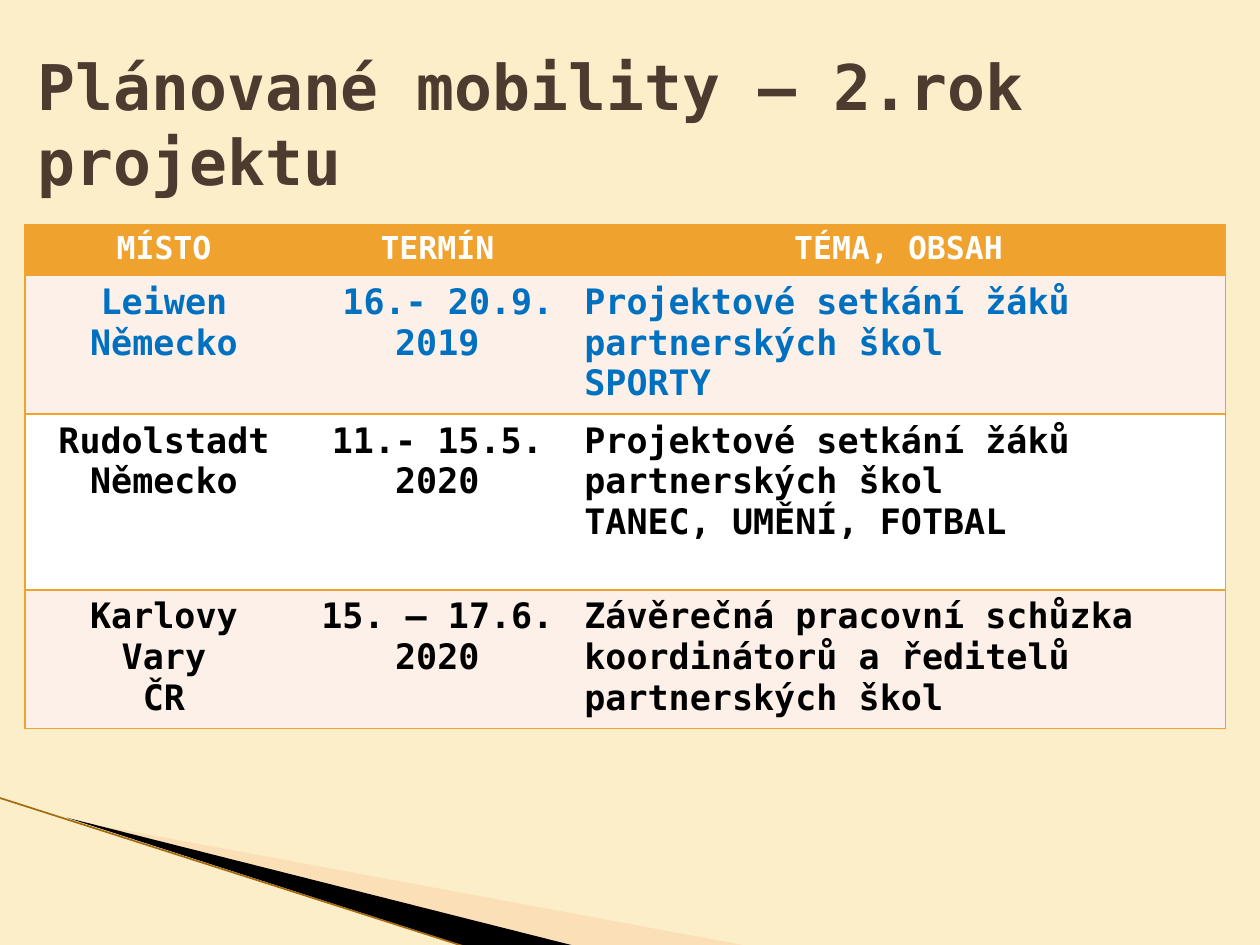
from dataclasses import dataclass

from lxml import etree
from pptx import Presentation
from pptx.dml.color import RGBColor
from pptx.enum.shapes import MSO_CONNECTOR
from pptx.enum.text import MSO_ANCHOR, PP_ALIGN
from pptx.oxml.ns import qn
from pptx.util import Pt

STRAIGHT = MSO_CONNECTOR.STRAIGHT
MIDDLE = MSO_ANCHOR.MIDDLE
LEFT, CENTER = PP_ALIGN.LEFT, PP_ALIGN.CENTER


@dataclass(frozen=True)
class Theme:
    font: str = "DejaVu Sans Mono"
    background: str = "FBEEC9"
    title: str = "4E3B30"
    accent: str = "F0A22E"
    band: str = "FCF0E8"
    white: str = "FFFFFF"
    black: str = "000000"
    highlight: str = "0070C0"
    peach: str = "FBC99E"
    edge: str = "A5690F"
    title_size: int = 36
    header_size: int = 18
    body_size: int = 20


THEME = Theme()

HEADER = ("MÍSTO", "TERMÍN", "TÉMA, OBSAH")
# Each cell is a list of paragraphs
MOBILITIES = (
    (("Leiwen", "Německo"), (" 16.- 20.9.", "2019"),
     ("Projektové setkání žáků partnerských škol", "SPORTY")),
    (("Rudolstadt", "Německo"), ("11.- 15.5.", "2020"),
     ("Projektové setkání žáků partnerských škol", "TANEC, UMĚNÍ, FOTBAL")),
    (("Karlovy Vary", "ČR"), ("15. – 17.6.", "2020"),
     ("Závěrečná pracovní schůzka koordinátorů a ředitelů partnerských škol",)),
)
COLUMN_WIDTHS = (159, 153.5, 373.5)
ROW_HEIGHTS = (29.2, 77, 100.4, 77)


def rgb(color):
    return RGBColor.from_string(color)


def write(frame, paragraphs, size, color, align=LEFT):
    for index, text in enumerate(paragraphs):
        paragraph = frame.add_paragraph() if index else frame.paragraphs[0]
        paragraph.text = text
        paragraph.alignment = align
        font = paragraph.font
        font.name, font.size, font.bold = THEME.font, Pt(size), True
        font.color.rgb = rgb(color)


def add_wedge(slide, points, color, opacity=100):
    corners = [(Pt(x), Pt(y)) for x, y in points]
    builder = slide.shapes.build_freeform(*corners[0])
    builder.add_line_segments(corners[1:], close=True)
    wedge = builder.convert_to_shape()
    wedge.shadow.inherit = False
    wedge.line.fill.background()
    wedge.fill.solid()
    wedge.fill.fore_color.rgb = rgb(color)
    if opacity < 100:
        tint = wedge.fill._xPr.find(".//" + qn("a:srgbClr"))
        etree.SubElement(tint, qn("a:alpha"), val=str(opacity * 1000))


def add_edge(slide, start, end):
    edge = slide.shapes.add_connector(STRAIGHT, *map(Pt, start + end))
    edge.line.color.rgb = rgb(THEME.edge)
    edge.line.width = Pt(0.95)
    etree.SubElement(edge._element.spPr, qn("a:effectLst"))


def add_title(slide, text):
    title = slide.shapes.add_textbox(Pt(14.4), Pt(31.7), Pt(692), Pt(77))
    title.text_frame.word_wrap = True
    title.text_frame.vertical_anchor = MIDDLE
    write(title.text_frame, [text], THEME.title_size, THEME.title)


def set_borders(cell, visible):
    properties = cell._tc.get_or_add_tcPr()
    for side in "LRTB":
        border = etree.SubElement(properties, qn(f"a:ln{side}"), w=str(Pt(1)))
        if side in visible:
            fill = etree.SubElement(border, qn("a:solidFill"))
            etree.SubElement(fill, qn("a:srgbClr"), val=THEME.accent)
        else:
            etree.SubElement(border, qn("a:noFill"))


def fill_cell(cell, paragraphs, size, color, background, align, borders):
    set_borders(cell, borders)
    cell.fill.solid()
    cell.fill.fore_color.rgb = rgb(background)
    write(cell.text_frame, paragraphs, size, color, align)


def add_schedule(slide):
    rows = [[(label,) for label in HEADER], *MOBILITIES]
    # Text size, text colour and background of each row
    styles = (
        (THEME.header_size, THEME.white, THEME.accent),
        (THEME.body_size, THEME.highlight, THEME.band),
        (THEME.body_size, THEME.black, THEME.white),
        (THEME.body_size, THEME.black, THEME.band),
    )
    schedule = slide.shapes.add_table(
        len(rows), len(HEADER), Pt(14.2), Pt(128.2),
        Pt(sum(COLUMN_WIDTHS)), Pt(sum(ROW_HEIGHTS))).table
    for column, width in zip(schedule.columns, COLUMN_WIDTHS):
        column.width = Pt(width)
    for row, height in zip(schedule.rows, ROW_HEIGHTS):
        row.height = Pt(height)

    outer_sides = ("LTB", "TB", "RTB")
    for r, (row, style) in enumerate(zip(rows, styles)):
        for c, paragraphs in enumerate(row):
            align = LEFT if r and c == 2 else CENTER
            fill_cell(schedule.cell(r, c), paragraphs, *style, align,
                      outer_sides[c])


def main():
    deck = Presentation()
    deck.slide_width, deck.slide_height = Pt(720), Pt(540)
    slide = deck.slides.add_slide(deck.slide_layouts[6])
    slide.background.fill.solid()
    slide.background.fill.fore_color.rgb = rgb(THEME.background)

    # Corner decoration
    add_wedge(slide, [(39.6, 468.5), (428.4, 540.7), (328.3, 540.7)],
              THEME.peach, opacity=40)
    add_wedge(slide, [(38.2, 467.3), (329, 540.7), (267.8, 541.4)],
              THEME.black)
    add_edge(slide, (-0.7, 455.8), (267.1, 541.4))

    # Content
    add_title(slide, "Plánované mobility – 2.rok projektu")
    add_schedule(slide)
    deck.save("out.pptx")


if __name__ == "__main__":
    main()
